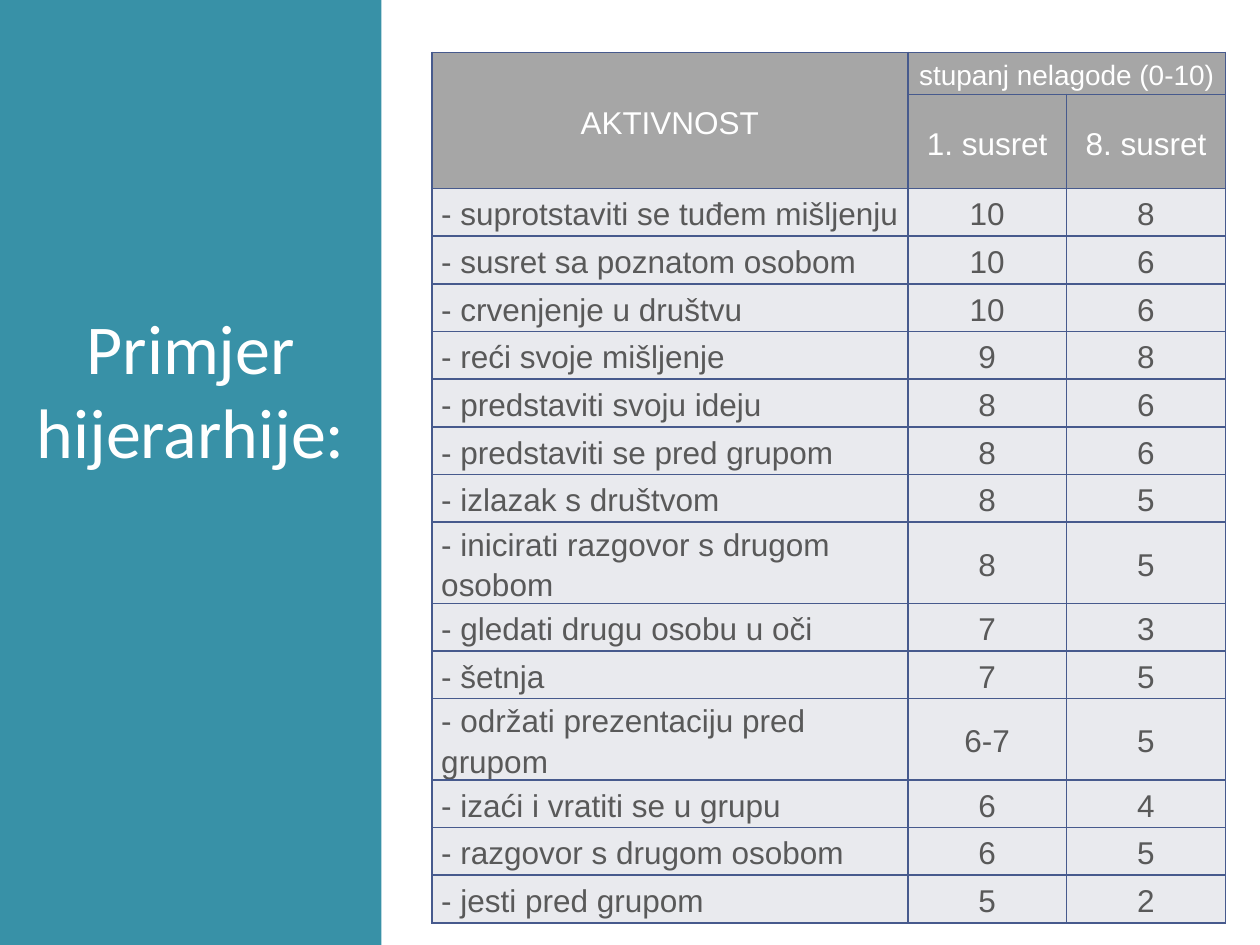
from dataclasses import dataclass

from lxml.etree import fromstring
from pptx import Presentation
from pptx.dml.color import RGBColor
from pptx.enum.text import MSO_ANCHOR, MSO_AUTO_SIZE, PP_ALIGN
from pptx.util import Pt


@dataclass(frozen=True)
class Theme:
    teal: str = "3891A7"
    header: str = "A6A6A6"
    body: str = "E9EAEE"
    border: str = "475A8D"
    white: str = "FFFFFF"
    ink: str = "595959"
    title_size: int = 40
    table_size: int = 18
    scale_size: int = 16


theme = Theme()

DRAWING_NS = "http://schemas.openxmlformats.org/drawingml/2006/main"
ACTIVITIES = [
    ("suprotstaviti se tuđem mišljenju", "10", "8"),
    ("susret sa poznatom osobom", "10", "6"),
    ("crvenjenje u društvu", "10", "6"),
    ("reći svoje mišljenje", "9", "8"),
    ("predstaviti svoju ideju", "8", "6"),
    ("predstaviti se pred grupom", "8", "6"),
    ("izlazak s društvom", "8", "5"),
    ("inicirati razgovor s drugom osobom", "8", "5"),
    ("gledati drugu osobu u oči", "7", "3"),
    ("šetnja", "7", "5"),
    ("održati prezentaciju pred grupom", "6-7", "5"),
    ("izaći i vratiti se u grupu", "6", "4"),
    ("razgovor s drugom osobom", "6", "5"),
    ("jesti pred grupom", "5", "2"),
]
HEADERS = [
    ("AKTIVNOST", "stupanj nelagode (0-10)", ""),
    ("", "1. susret", "8. susret"),
]


def write(frame, text, *, size=theme.table_size, color=theme.ink, font="Arial",
          align=PP_ALIGN.CENTER, spacing=1.15):
    paragraph = frame.paragraphs[0]
    paragraph.alignment = align
    paragraph.line_spacing = spacing
    run = paragraph.add_run()
    run.text = text
    run.font.name = font
    run.font.size = Pt(size)
    run.font.bold = False
    run.font.color.rgb = RGBColor.from_string(color)


def style_cell(cell, fill):
    """Fill the cell, set its insets and draw all four borders."""
    cell.fill.solid()
    cell.fill.fore_color.rgb = RGBColor.from_string(fill)
    cell.vertical_anchor = MSO_ANCHOR.MIDDLE
    cell.margin_left = cell.margin_right = Pt(5.4)
    cell.margin_top = cell.margin_bottom = 0
    properties = cell._tc.get_or_add_tcPr()
    for position, side in enumerate(("lnL", "lnR", "lnT", "lnB")):
        properties.insert(position, fromstring(
            f'<a:{side} xmlns:a="{DRAWING_NS}" w="{Pt(1)}"><a:solidFill>'
            f'<a:srgbClr val="{theme.border}"/></a:solidFill></a:{side}>'))


presentation = Presentation()
presentation.slide_width = Pt(720)
presentation.slide_height = Pt(540)
slide = presentation.slides.add_slide(presentation.slide_layouts[5])

# Title panel; the deep bottom inset lifts the text above the middle
title = slide.shapes.title
title.left, title.top, title.width, title.height = 0, 0, Pt(218), Pt(540)
title.fill.solid()
title.fill.fore_color.rgb = RGBColor.from_string(theme.teal)
title_frame = title.text_frame
title_frame.auto_size = MSO_AUTO_SIZE.NONE
title_frame.word_wrap = True
title_frame.vertical_anchor = MSO_ANCHOR.MIDDLE
title_frame.margin_bottom = Pt(100)
write(title_frame, "Primjer hijerarhije:", size=theme.title_size,
      color=theme.white, font="Calibri", spacing=1.0)

# Hierarchy table
column_widths = [272, 90.75, 90.75]
row_heights = [24, 53.75] + [27.25] * len(ACTIVITIES)
hierarchy = slide.shapes.add_table(
    len(row_heights), len(column_widths), Pt(246.75), Pt(30),
    Pt(sum(column_widths)), Pt(sum(row_heights))).table
hierarchy.first_row = hierarchy.horz_banding = False
for column, width in zip(hierarchy.columns, column_widths):
    column.width = Pt(width)
for row, height in zip(hierarchy.rows, row_heights):
    row.height = Pt(height)

for row_index, labels in enumerate(HEADERS):
    for column_index, label in enumerate(labels):
        cell = hierarchy.cell(row_index, column_index)
        style_cell(cell, theme.header)
        if label:
            is_scale = (row_index, column_index) == (0, 1)
            write(cell.text_frame, label, color=theme.white,
                  size=theme.scale_size if is_scale else theme.table_size)
hierarchy.cell(0, 0).merge(hierarchy.cell(1, 0))
hierarchy.cell(0, 1).merge(hierarchy.cell(0, 2))

for row_index, (activity, *ratings) in enumerate(ACTIVITIES, start=len(HEADERS)):
    for column_index, value in enumerate([f"- {activity}", *ratings]):
        cell = hierarchy.cell(row_index, column_index)
        style_cell(cell, theme.body)
        write(cell.text_frame, value,
              align=PP_ALIGN.CENTER if column_index else PP_ALIGN.LEFT)

presentation.save("out.pptx")
